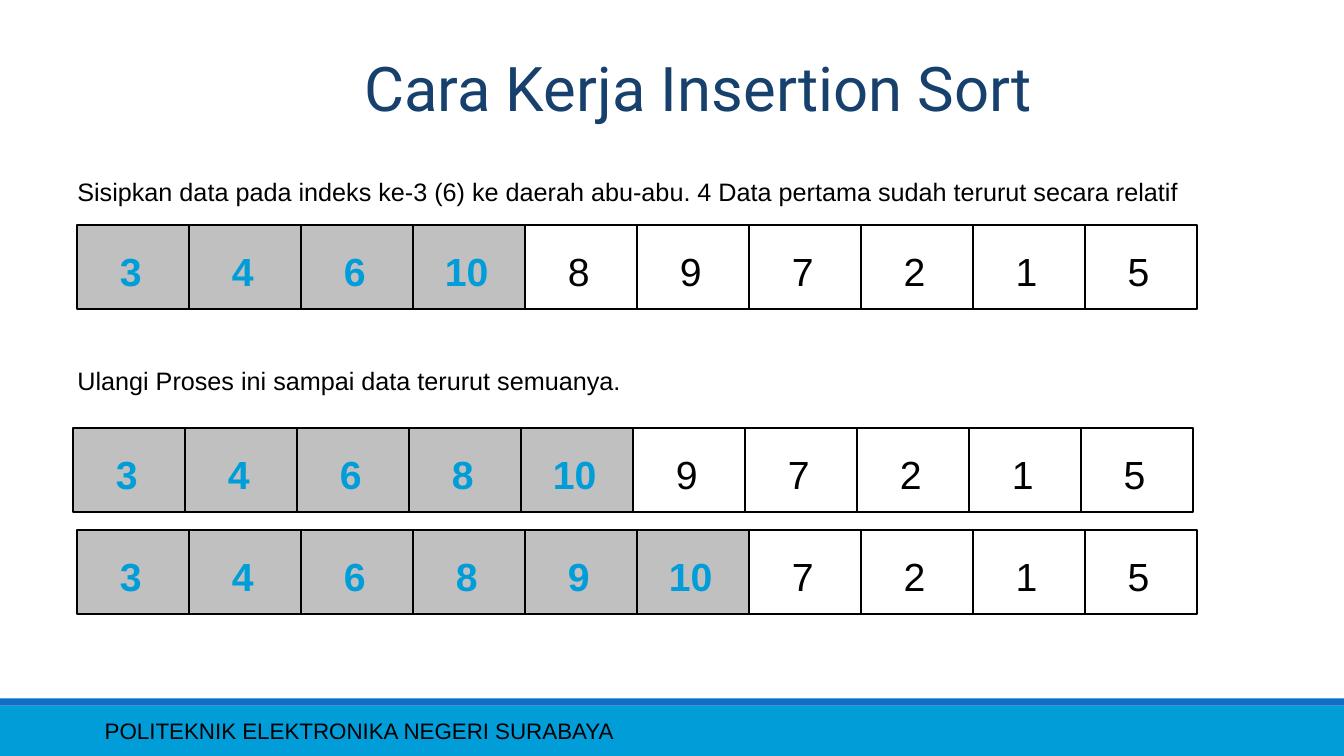
from dataclasses import dataclass

from pptx import Presentation
from pptx.dml.color import RGBColor
from pptx.enum.shapes import MSO_SHAPE
from pptx.enum.text import MSO_ANCHOR, PP_ALIGN
from pptx.util import Cm, Pt


@dataclass(frozen=True)
class Theme:
    ink: RGBColor = RGBColor(0x00, 0x00, 0x00)
    paper: RGBColor = RGBColor(0xFF, 0xFF, 0xFF)
    title: RGBColor = RGBColor(0x17, 0x40, 0x6D)
    accent: RGBColor = RGBColor(0x00, 0x9D, 0xD9)
    stripe: RGBColor = RGBColor(0x0F, 0x6F, 0xC6)
    sorted_fill: RGBColor = RGBColor(0xC0, 0xC0, 0xC0)
    title_font: str = "Roboto"
    body_font: str = "Arial"
    title_size: Pt = Pt(44)
    number_size: Pt = Pt(28)
    body_size: Pt = Pt(18)
    footer_size: Pt = Pt(16)
    border: Pt = Pt(1.5)


T = Theme()
WIDTH, HEIGHT = 33.87, 19.05


def write(s, text, size, color, font=T.body_font, align=PP_ALIGN.LEFT,
          anchor=MSO_ANCHOR.TOP, bold=False):
    tf = s.text_frame
    tf.word_wrap = True
    tf.vertical_anchor = anchor
    p = tf.paragraphs[0]
    p.text = text
    p.alignment = align
    p.font.name, p.font.size, p.font.bold = font, size, bold
    p.font.color.rgb = color


def add_text(shapes, box, *args, **style):
    write(shapes.add_textbox(*map(Cm, box)), *args, **style)


def add_rect(shapes, box, fill, border=None):
    s = shapes.add_shape(MSO_SHAPE.RECTANGLE, *map(Cm, box))
    s.shadow.inherit = False
    s.fill.solid()
    s.fill.fore_color.rgb = fill
    if border is None:
        s.line.fill.background()
    else:
        s.line.color.rgb = border
        s.line.width = T.border
    return s


def add_array(shapes, box, numbers, sorted_count):
    """Draw one cell per number, with the sorted cells at the start in grey."""
    left, top, width, height = box
    cell_width = width / len(numbers)
    cells = shapes.add_group_shape().shapes
    for i, number in enumerate(numbers):
        is_sorted = i < sorted_count
        s = add_rect(cells, (left + i * cell_width, top, cell_width, height),
                     T.sorted_fill if is_sorted else T.paper, T.ink)
        write(s, str(number), T.number_size, T.accent if is_sorted else T.ink,
              align=PP_ALIGN.CENTER, anchor=MSO_ANCHOR.MIDDLE, bold=is_sorted)
        s.text_frame.margin_right = Cm(0.36)
        s.text_frame.margin_top = Cm(0.3)


def add_footer(shapes, box):
    left, top, width, height = box
    stripe = 0.18
    add_rect(shapes, (left, top + stripe, width, height - stripe), T.accent)
    add_rect(shapes, (left, top, width, stripe), T.stripe)
    add_text(shapes, (left + 2.39, top + 0.31, 21.36, 1.02),
             "POLITEKNIK ELEKTRONIKA NEGERI SURABAYA",
             T.footer_size, T.ink, anchor=MSO_ANCHOR.MIDDLE)


def add_sort_slide(prs):
    shapes = prs.slides.add_slide(prs.slide_layouts[6]).shapes
    add_footer(shapes, (0, 17.6, WIDTH, HEIGHT - 17.6))
    add_text(shapes, (3.18, 0.61, 28.85, 3.18), "Cara Kerja Insertion Sort",
             T.title_size, T.title, font=T.title_font,
             align=PP_ALIGN.CENTER, anchor=MSO_ANCHOR.MIDDLE)

    captions = [
        (4.32, "Sisipkan data pada indeks ke-3 (6) ke daerah abu-abu. "
               "4 Data pertama sudah terurut secara relatif"),
        (9.09, "Ulangi Proses ini sampai data terurut semuanya."),
    ]
    for top, caption in captions:
        add_text(shapes, (1.7, top, 28.5, 1.02), caption, T.body_size, T.ink)

    steps = [
        (1.94, 5.67, [3, 4, 6, 10, 8, 9, 7, 2, 1, 5], 4),
        (1.84, 10.79, [3, 4, 6, 8, 10, 9, 7, 2, 1, 5], 5),
        (1.94, 13.36, [3, 4, 6, 8, 9, 10, 7, 2, 1, 5], 6),
    ]
    for left, top, numbers, sorted_count in steps:
        add_array(shapes, (left, top, 28.22, 2.12), numbers, sorted_count)


def main():
    prs = Presentation()
    prs.slide_width, prs.slide_height = Cm(WIDTH), Cm(HEIGHT)
    add_sort_slide(prs)
    prs.save("out.pptx")


if __name__ == "__main__":
    main()
